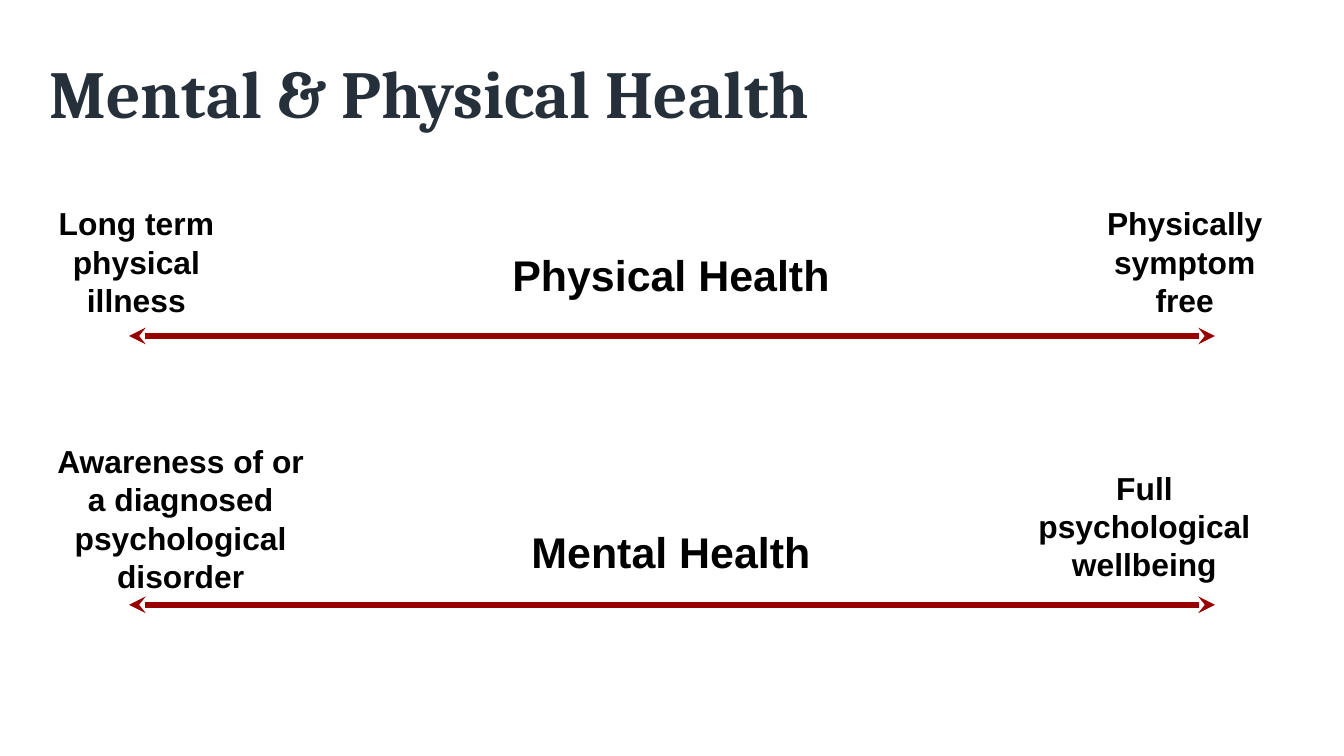
from lxml import etree
from pptx import Presentation
from pptx import util as u
from pptx.dml.color import RGBColor
from pptx.enum import shapes, text
from pptx.oxml.ns import qn

COLORS = {"title": "25303B", "label": "000000", "arrow": "980000"}
TITLE = "Mental & Physical Health"
TITLE_AREA = (20.16, 27.36, 619.92, 43.92)
ARROW_LEFT, ARROW_RIGHT = 69.12, 650.88

# Each label: paragraphs, (left, top, width, height) in points, text size
SCALES = [
    {"arrow_y": 180, "labels": [
        (["Physical Health"], (246.96, 126, 225.36, 24.48), 23),
        (["Long term physical illness"], (6.48, 102.24, 133.2, 53.28), 17),
        (["Physically symptom", "free"], (568.08, 102.24, 133.2, 53.28), 17),
    ]},
    {"arrow_y": 324, "labels": [
        (["Mental Health"], (246.96, 274.32, 225.36, 24.48), 23),
        (["Awareness of or a diagnosed psychological disorder"],
         (20.16, 229.68, 153.36, 53.28), 17),
        (["Full psychological wellbeing"], (546.48, 244.08, 133.2, 53.28), 17),
    ]},
]


def apply(target, values):
    for name, value in values.items():
        setattr(target, name, value)


def write(shape, lines, font, color, paragraph, frame):
    apply(shape.text_frame, frame)
    shape.text_frame.text = "\n".join(lines)
    for para in shape.text_frame.paragraphs:
        apply(para, paragraph)
        for span in para.runs:
            apply(span.font, font)
            span.font.color.rgb = RGBColor.from_string(COLORS[color])


def add_title(page):
    title = page.shapes.title
    apply(title, dict(zip(("left", "top", "width", "height"), map(u.Pt, TITLE_AREA))))
    write(title, [TITLE],
          {"name": "Cambria", "size": u.Pt(36), "bold": True}, "title",
          {"alignment": text.PP_ALIGN.LEFT},
          {"vertical_anchor": text.MSO_ANCHOR.MIDDLE, "word_wrap": True,
           "auto_size": text.MSO_AUTO_SIZE.NONE,
           "margin_left": u.Pt(6.48), "margin_right": u.Pt(6.48),
           "margin_top": u.Pt(3.4), "margin_bottom": u.Pt(3.4)})


def add_label(page, lines, area, size):
    box = page.shapes.add_textbox(*map(u.Pt, area))
    margins = {f"margin_{side}": u.Pt(7.2) for side in ("left", "top", "right", "bottom")}
    write(box, lines,
          {"name": "Arial", "size": u.Pt(size), "bold": True}, "label",
          {"alignment": text.PP_ALIGN.CENTER, "line_spacing": 1.0},
          {"word_wrap": True, "vertical_anchor": text.MSO_ANCHOR.TOP, **margins})


def add_double_arrow(page, y):
    arrow = page.shapes.add_connector(
        shapes.MSO_CONNECTOR.STRAIGHT,
        u.Pt(ARROW_LEFT), u.Pt(y), u.Pt(ARROW_RIGHT), u.Pt(y))
    arrow.line.width = u.Pt(3)
    arrow.line.color.rgb = RGBColor.from_string(COLORS["arrow"])
    line = arrow.line._get_or_add_ln()
    for end in ("a:headEnd", "a:tailEnd"):
        etree.SubElement(line, qn(end), type="stealth", w="med", len="med")
    etree.SubElement(arrow._element.spPr, qn("a:effectLst"))


def main():
    deck = Presentation()
    deck.slide_width, deck.slide_height = u.Pt(720), u.Pt(405)
    page = deck.slides.add_slide(deck.slide_layouts.get_by_name("Title Only"))
    add_title(page)
    for scale in SCALES:
        add_double_arrow(page, scale["arrow_y"])
        for label in scale["labels"]:
            add_label(page, *label)
    deck.save("out.pptx")


if __name__ == "__main__":
    main()
